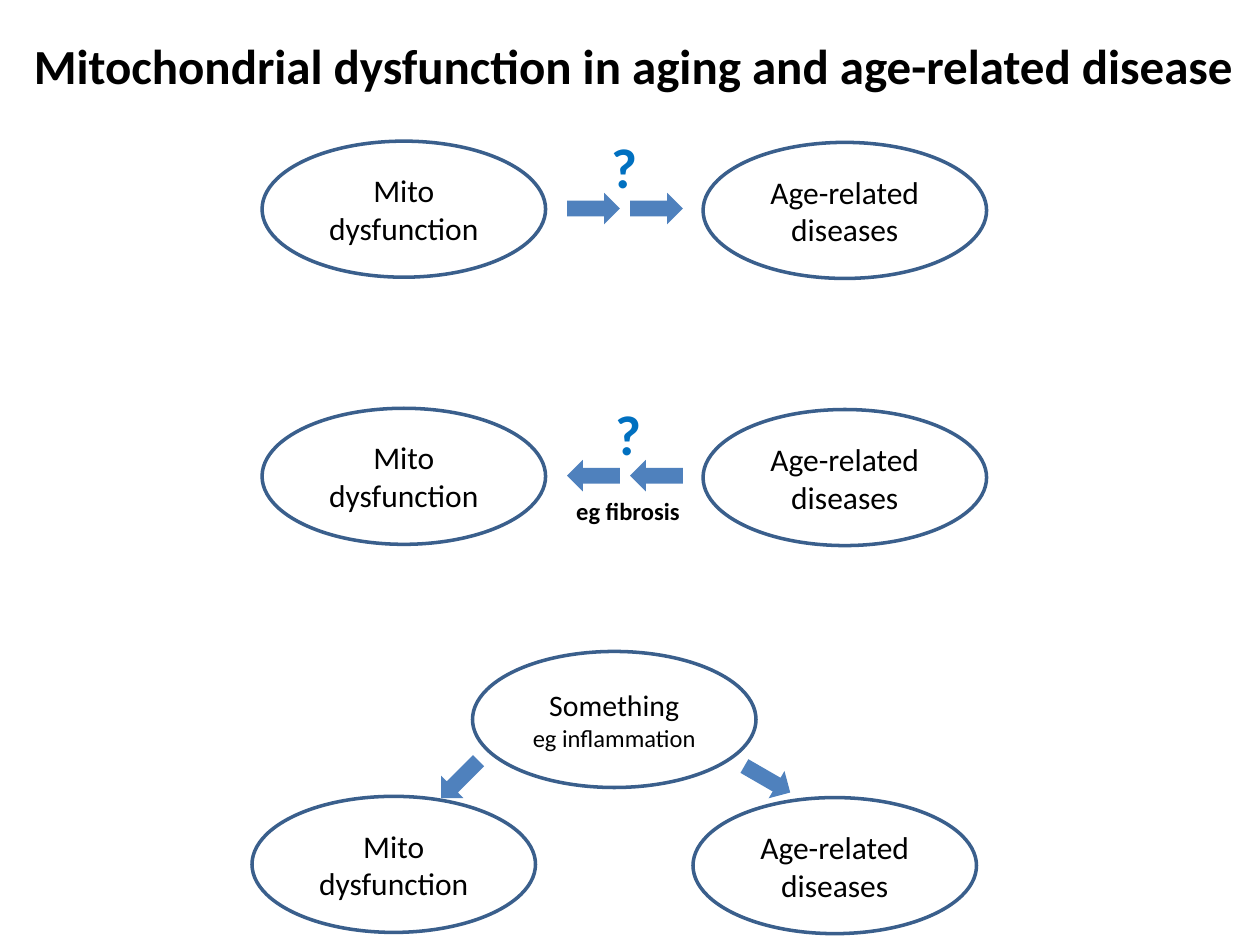
from pptx import Presentation
from pptx.dml.color import RGBColor
from pptx.enum import shapes, text
from pptx.util import Inches, Pt

BLACK = RGBColor(0x00, 0x00, 0x00)
OUTLINE = RGBColor(0x3A, 0x5F, 0x8C)
ARROW = RGBColor(0x4F, 0x81, 0xBD)
QUESTION = RGBColor(0x00, 0x70, 0xC0)

OVAL_SIZE = (2.25, 1.08)
ARROW_SIZE = (0.42, 0.25)
MITO = ["Mito dysfunction"]
DISEASES = ["Age-related", "diseases"]


def add_paragraph(frame, content, size=18, color=BLACK, bold=False,
                  align=text.PP_ALIGN.CENTER, before=0):
    """Fill the frame's first paragraph if it is empty, else append one."""
    first = frame.paragraphs[0]
    para = frame.add_paragraph() if first.runs else first
    para.alignment = align
    para.space_before = Pt(before)
    span = para.add_run()
    span.text = content
    span.font.name = "Calibri"
    span.font.size = Pt(size)
    span.font.bold = bold
    span.font.color.rgb = color


def add_text_box(page, left, top, width, height):
    box = page.shapes.add_textbox(*map(Inches, (left, top, width, height)))
    box.text_frame.word_wrap = False
    return box.text_frame


def add_oval(page, left, top, lines, sizes=(18, 18)):
    oval = page.shapes.add_shape(shapes.MSO_SHAPE.OVAL,
                                 *map(Inches, (left, top, *OVAL_SIZE)))
    oval.shadow.inherit = False
    oval.fill.background()
    oval.line.color.rgb = OUTLINE
    oval.line.width = Pt(2)
    frame = oval.text_frame
    frame.word_wrap = True
    frame.vertical_anchor = text.MSO_ANCHOR.MIDDLE
    for line, size in zip(lines, sizes):
        add_paragraph(frame, line, size=size)


def add_arrow(page, left, top, rotation=0):
    arrow = page.shapes.add_shape(shapes.MSO_SHAPE.RIGHT_ARROW,
                                  *map(Inches, (left, top, *ARROW_SIZE)))
    arrow.shadow.inherit = False
    arrow.fill.solid()
    arrow.fill.fore_color.rgb = ARROW
    arrow.line.fill.background()
    arrow.rotation = rotation


def add_oval_pair(page, left, top):
    add_oval(page, left, top, MITO)
    add_oval(page, left + 3.5, top + 0.01, DISEASES)


def add_causal_row(page, top, rotation):
    """Two ovals joined by a pair of arrows."""
    add_oval_pair(page, 2.08, top)
    for left in (5, 4.5):
        add_arrow(page, left, top + 0.41, rotation)


def add_question(page, left, top, width, height):
    frame = add_text_box(page, left, top, width, height)
    add_paragraph(frame, "?", size=32, color=QUESTION, bold=True)
    return frame


def add_common_cause(page):
    add_oval_pair(page, 2, 6.32)
    add_arrow(page, 5.88, 6.06, 30)
    add_arrow(page, 3.44, 6.06, 135)
    add_oval(page, 3.75, 5.17, ["Something", "eg inflammation"], (17, 14))


def main():
    deck = Presentation()
    deck.slide_width, deck.slide_height = Inches(10), Inches(7.5)
    page = deck.slides.add_slide(deck.slide_layouts[6])

    title = add_text_box(page, 0.17, 0.25, 9.75, 0.53)
    title.vertical_anchor = text.MSO_ANCHOR.MIDDLE
    add_paragraph(title, "Mitochondrial dysfunction in aging and age-related disease",
                  size=28, bold=True, align=text.PP_ALIGN.LEFT)

    add_causal_row(page, 1.12, 0)
    add_question(page, 4.75, 1, 0.41, 0.64)

    add_causal_row(page, 3.24, 180)
    example = add_question(page, 4.47, 3.12, 1.03, 1.11)
    add_paragraph(example, "eg fibrosis", size=14, bold=True, before=17)

    add_common_cause(page)
    deck.save("out.pptx")


if __name__ == "__main__":
    main()
